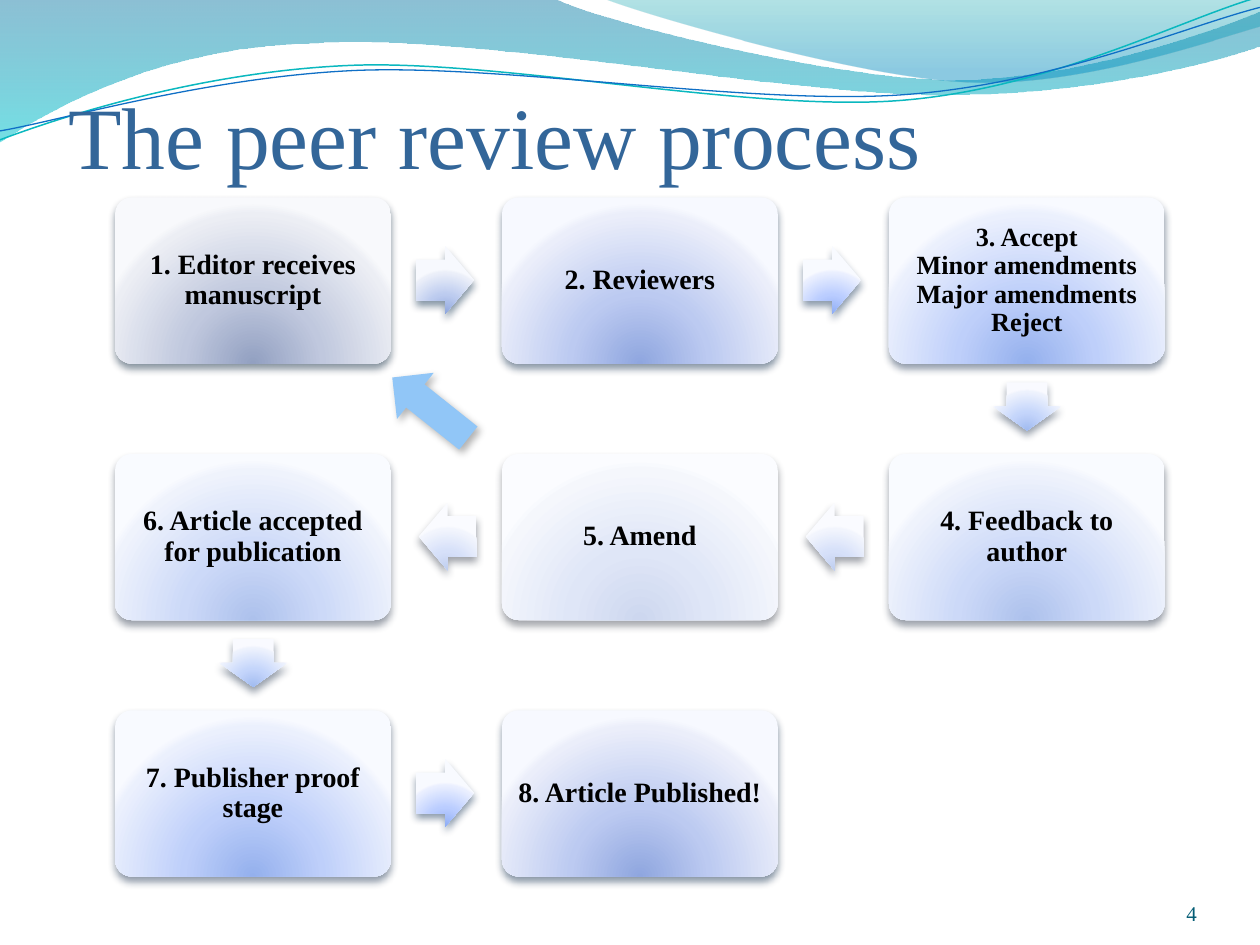
"""Build the slide that shows the peer review process as a flow of eight steps."""
from dataclasses import dataclass

from lxml.etree import SubElement
from pptx import Presentation
from pptx.dml.color import RGBColor
from pptx.enum.shapes import MSO_SHAPE
from pptx.enum.text import MSO_ANCHOR, PP_ALIGN
from pptx.oxml.ns import qn
from pptx.util import Cm, Pt

FONT = "Times New Roman"
COLOURS = {
    "title": "336699", "number": "045D75", "step": "000000",
    "return": "91C6F7", "return shadow": "000000",
    "wave top": "0074A1", "wave foot": "00C6CF",
    "crest top": "00A1A9", "crest foot": "008BBF",
    "teal line": "0AB8BF", "blue line": "0F6FC6",
}
TONES = {
    "slate": "92A0C1 C0C8DE ECEEF4 F8F9FC 031D35",
    "indigo": "8FA6DF BCCAF1 EBEEFA F7F9FF 082545",
    "blue": "94B0ED BECFFA EBF0FD F8FAFF 172D4C",
    "sky": "ADC1EC CCD9F8 EFF3FC F9FBFF 2D394D",
    "mist": "CDD7EF DFE6F7 F5F7FC FBFCFF 404550",
    "indigo arrow": "8EA6DD BCCBEF EBEFF9 F7F9FE 032544",
    "blue arrow": "8EADF5 BACDFF EAEFFF F8FAFF 0D2C50",
    "sky arrow": "A1BBF0 C4D5FB EDF2FD F9FAFF 24354E",
    "mist arrow": "BFCEEF D6E0F9 F2F5FD FAFBFF 39404F",
}
GLOW_STOPS = (0, 43, 93, 100)
GRID_LEFT, GRID_TOP = 2.32, 3.98
COLUMN_PITCH, ROW_PITCH = 7.8, 5.17
STEP_WIDTH, STEP_HEIGHT = 5.56, 3.35
ARROW_HEIGHT = 1.37


@dataclass
class Step:
    """One step with its grid cell and the arrow that leaves it."""
    text: str
    column: int
    row: int
    tone: str
    arrow_tone: str = ""
    turn: int = 0
    size: int = 16


@dataclass
class Curve:
    """A path of line and Bezier segments, in centimetres."""
    start: tuple
    segments: list
    closed: bool = False


STEPS = [
    Step("1. Editor receives manuscript", 0, 0, "slate", "indigo arrow"),
    Step("2. Reviewers", 1, 0, "indigo", "blue arrow"),
    Step("3. Accept\vMinor amendments\vMajor amendments\vReject", 2, 0, "blue", "sky arrow", 90, 15),
    Step("4. Feedback to author", 2, 1, "sky", "mist arrow", 180),
    Step("5. Amend", 1, 1, "mist", "mist arrow", 180),
    Step("6. Article accepted for publication", 0, 1, "sky", "sky arrow", 90),
    Step("7. Publisher proof stage", 0, 2, "blue", "blue arrow"),
    Step("8. Article Published!", 1, 2, "indigo"),
]
WAVE = Curve((0, 0), [
    (11.18, -0.03), (12.09, 0.43, 16.87, 1.6, 19.25, 1.6),
    (21.67, 1.6, 24.33, 0.66, 25.4, 0.23), (25.43, 0.91),
    (24.97, 1.12, 22.1, 1.93, 18.95, 1.91), (15.8, 1.91, 9.7, 0.71, 6.53, 0.86),
    (3.28, 0.91, 1.17, 2.11, -0.03, 2.87)], True)
CREST = Curve((12.17, -0.03), [
    (12.93, 0.28, 17.32, 1.57, 19.53, 1.65),
    (21.74, 1.75, 24.41, 0.81, 25.4, 0.53), (25.4, 0)], True)
TEAL_LINE = Curve((0, 2.82), [
    (1.22, 2.36, 4.01, 1.45, 7.04, 1.32), (10.03, 1.19, 15.06, 2.26, 18.11, 2.03),
    (21.16, 1.8, 23.83, 0.38, 25.35, -0.05)])
BLUE_LINE = Curve((0, 2.64), [
    (1.19, 2.44, 4.17, 1.55, 7.19, 1.42), (10.24, 1.3, 15.16, 2.13, 18.21, 1.91),
    (21.23, 1.7, 23.9, 0.53, 25.4, 0.15)])


def add_colour(parent, colour: str, opacity: int) -> None:
    """Add a colour with an opacity in percent."""
    tint = SubElement(parent, qn("a:srgbClr"), val=colour)
    SubElement(tint, qn("a:alpha"), val=str(opacity * 1000))


def fill_gradient(shape, stops: list, glow: bool = False) -> None:
    """Fill with a downward gradient, or with a glow from below."""
    shape.fill.background()
    properties = shape.element.spPr
    gradient = SubElement(properties, qn("a:gradFill"), rotWithShape="1")
    properties.replace(properties.find(qn("a:noFill")), gradient)
    stop_list = SubElement(gradient, qn("a:gsLst"))
    for position, colour, opacity in stops:
        add_colour(SubElement(stop_list, qn("a:gs"), pos=str(position * 1000)), colour, opacity)
    if glow:
        centre = SubElement(gradient, qn("a:path"), path="circle")
        SubElement(centre, qn("a:fillToRect"), l="50000", t="130000", r="50000", b="-30000")
    else:
        SubElement(gradient, qn("a:lin"), ang="5400000", scaled="1")


def cast_shadow(shape, colour: str, opacity: int, distance: float, angle: int) -> None:
    """Give a shape a soft outer shadow."""
    shape.shadow.inherit = False
    effects = shape.element.spPr.find(qn("a:effectLst"))
    shadow = SubElement(effects, qn("a:outerShdw"), blurRad=str(Pt(4.5)), dist=str(Pt(distance)),
                        dir=str(angle * 60000), algn="ctr", rotWithShape="0")
    add_colour(shadow, colour, opacity)


def write(shape, text: str, *, size: int, colour: str, bold: bool = False, align=PP_ALIGN.LEFT,
          anchor=MSO_ANCHOR.BOTTOM, inset: float = 0, spacing: float = 1.0) -> None:
    """Write formatted text into a shape."""
    frame = shape.text_frame
    frame.word_wrap = True
    frame.vertical_anchor = anchor
    frame.margin_left = frame.margin_right = frame.margin_top = frame.margin_bottom = Cm(inset)
    paragraph = frame.paragraphs[0]
    paragraph.text = text
    paragraph.alignment = align
    paragraph.line_spacing = spacing
    for run in paragraph.runs:
        run.font.name, run.font.size, run.font.bold = FONT, Pt(size), bold
        run.font.color.rgb = RGBColor.from_string(COLOURS[colour])


def draw_curve(slide, curve: Curve):
    """Draw a freeform and bend each run of three points into a Bezier segment."""
    points = [(Cm(segment[i]), Cm(segment[i + 1]))
              for segment in curve.segments for i in range(0, len(segment), 2)]
    builder = slide.shapes.build_freeform(Cm(curve.start[0]), Cm(curve.start[1]))
    builder.add_line_segments(points, close=curve.closed)
    outline = builder.convert_to_shape()
    outline.shadow.inherit = False
    straights = iter(list(outline.element.spPr.iter(qn("a:lnTo"))))
    for segment in curve.segments:
        pieces = [next(straights) for _ in range(len(segment) // 2)]
        if len(pieces) == 3:
            path = pieces[0].getparent()
            bend = SubElement(path, qn("a:cubicBezTo"))
            path.replace(pieces[0], bend)
            for piece in pieces:
                bend.append(piece[0])
            for piece in pieces[1:]:
                path.remove(piece)
    return outline


def draw_band(slide, curve: Curve, stops: list) -> None:
    """Draw a translucent band of the header."""
    band = draw_curve(slide, curve)
    band.line.fill.background()
    fill_gradient(band, stops)


def draw_line(slide, curve: Curve, colour: str, width: float) -> None:
    """Draw a thin curved line of the header."""
    line = draw_curve(slide, curve)
    line.fill.background()
    line.line.color.rgb = RGBColor.from_string(COLOURS[colour])
    line.line.width = Pt(width)


def draw_glowing(slide, preset, left: float, top: float, width: float, height: float, tone: str):
    """Draw a glowing preset shape with a shadow below it."""
    *glow, shade = TONES[tone].split()
    shape = slide.shapes.add_shape(preset, Cm(left), Cm(top), Cm(width), Cm(height))
    shape.line.fill.background()
    fill_gradient(shape, [(stop, colour, 100) for stop, colour in zip(GLOW_STOPS, glow)], glow=True)
    cast_shadow(shape, shade, 48, 3, 90)
    return shape


def draw_step(slide, step: Step) -> None:
    """Draw a step and the arrow that leads to the next one."""
    left = GRID_LEFT + step.column * COLUMN_PITCH
    top = GRID_TOP + step.row * ROW_PITCH
    card = draw_glowing(slide, MSO_SHAPE.ROUNDED_RECTANGLE, left, top, STEP_WIDTH, STEP_HEIGHT, step.tone)
    card.adjustments[0] = 0.1
    write(card, step.text, size=step.size, colour="step", bold=True, align=PP_ALIGN.CENTER,
          anchor=MSO_ANCHOR.MIDDLE, inset=0.15, spacing=0.9)
    if not step.arrow_tone:
        return
    arrow_left, arrow_top, length = {
        0: (left + 6.07, top + 0.98, 1.17),
        90: (left + 2.3, top + 3.53, 0.97),
        180: (left - 1.68, top + 0.98, 1.17),
    }[step.turn]
    arrow = draw_glowing(slide, MSO_SHAPE.RIGHT_ARROW, arrow_left, arrow_top, length,
                         ARROW_HEIGHT, step.arrow_tone)
    arrow.adjustments[0], arrow.adjustments[1] = 0.6, 0.5
    arrow.rotation = step.turn


def main() -> None:
    """Build and save the slide."""
    deck = Presentation()
    deck.slide_width, deck.slide_height = Cm(25.4), Cm(19.05)
    slide = deck.slides.add_slide(deck.slide_layouts[6])
    draw_band(slide, WAVE, [(0, COLOURS["wave top"], 45), (100, COLOURS["wave foot"], 55)])
    draw_band(slide, CREST, [(0, COLOURS["crest top"], 30), (80, COLOURS["crest foot"], 45)])
    draw_line(slide, TEAL_LINE, "teal line", 0.85)
    draw_line(slide, BLUE_LINE, "blue line", 0.75)
    title = slide.shapes.add_textbox(Cm(1.38), Cm(0.6), Cm(22.86), Cm(3.18))
    write(title, "The peer review process", size=50, colour="title")
    number = slide.shapes.add_textbox(Cm(22.02), Cm(17.65), Cm(2.11), Cm(1.02))
    write(number, "4", size=12, colour="number", align=PP_ALIGN.RIGHT)
    for step in STEPS:
        draw_step(slide, step)
    resubmit = slide.shapes.add_shape(MSO_SHAPE.UP_ARROW, Cm(8.08), Cm(7.24), Cm(1.19), Cm(1.96))
    resubmit.rotation = 308.5
    resubmit.fill.solid()
    resubmit.fill.fore_color.rgb = RGBColor.from_string(COLOURS["return"])
    resubmit.line.fill.background()
    cast_shadow(resubmit, COLOURS["return shadow"], 30, 2.6, 53)
    deck.save("out.pptx")


if __name__ == "__main__":
    main()
